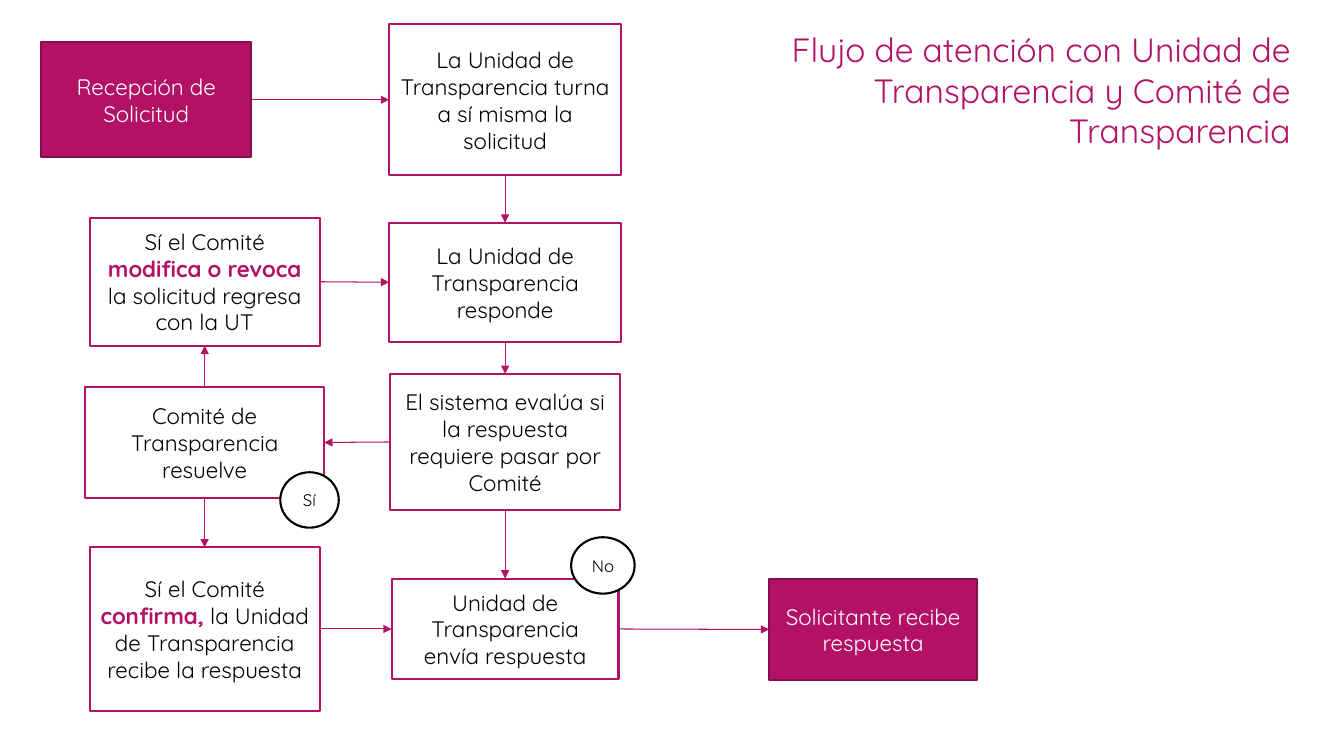
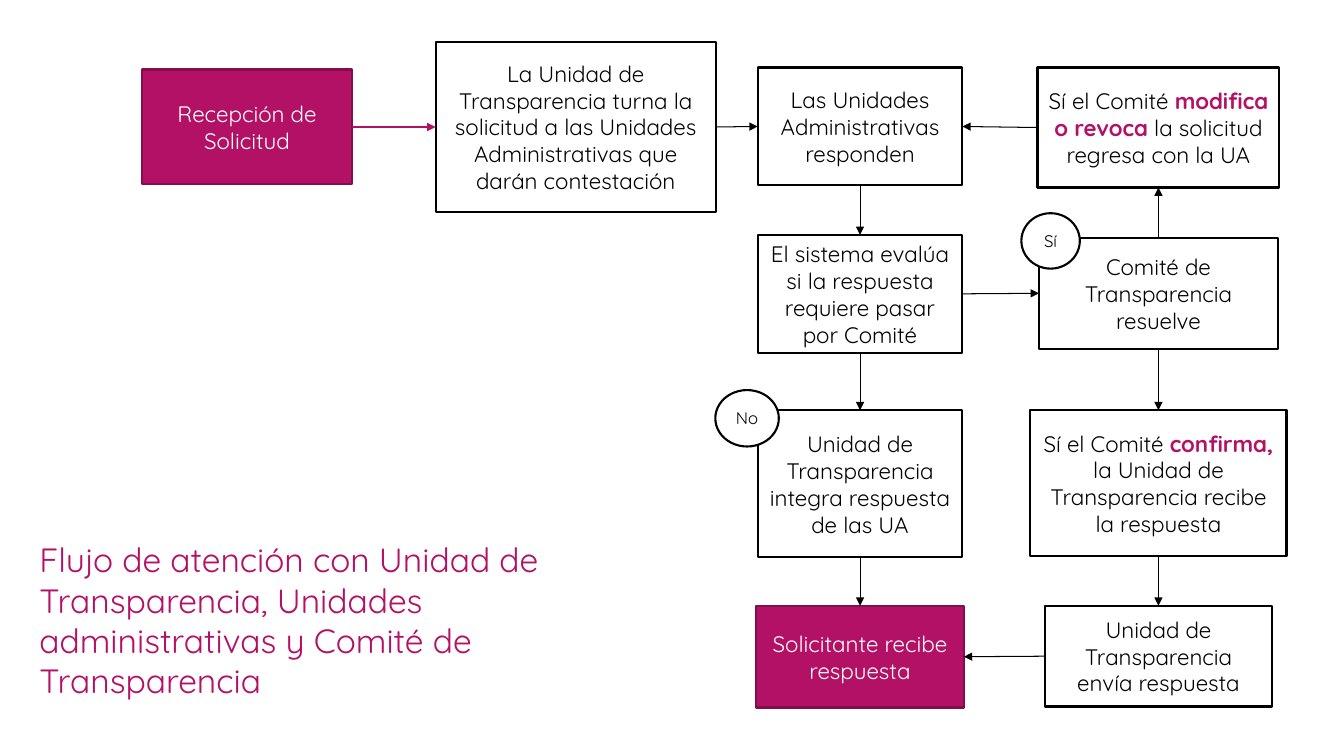
from collections import namedtuple

from pptx import Presentation
from pptx.dml.color import RGBColor
from pptx.enum.shapes import MSO_CONNECTOR as Connector, MSO_SHAPE as Shape
from pptx.enum.text import MSO_ANCHOR as Anchor, MSO_AUTO_SIZE as AutoSize, PP_ALIGN as Align
from pptx.oxml.ns import qn
from pptx.util import Emu, Pt

# Shared look: 100 px to the inch
EMU_PER_PX = 9144
FONT = "Quicksand"
MAGENTA, DARK_MAGENTA = "B31166", "840D4B"
BLACK, WHITE = "000000", "FFFFFF"
TITLE_SIZE, STEP_SIZE, BADGE_SIZE = 24, 16, 12
# Connection sites at the start and end of an arrow
SIDES = {"up": (0, 2), "left": (1, 3), "down": (2, 0), "right": (3, 1)}

Box = namedtuple("Box", "left top width height")
Step = namedtuple("Step", "top width height text")


def px(length):
    return Emu(int(length * EMU_PER_PX))


def rgb(colour):
    return RGBColor.from_string(colour)


def place(shape, box):
    shape.left, shape.top, shape.width, shape.height = map(px, box)


def add_run(paragraph, text, size, colour, bold=False):
    run = paragraph.add_run()
    run.text = text
    font = run.font
    font.name, font.size, font.bold = FONT, Pt(size), bold
    font.color.rgb = rgb(colour)


def add_title(slide, box, text, align):
    title = slide.shapes.title
    place(title, box)
    frame = title.text_frame
    frame.word_wrap = True
    frame.auto_size = AutoSize.NONE
    frame.vertical_anchor = Anchor.TOP
    paragraph = frame.paragraphs[0]
    paragraph.alignment = align
    add_run(paragraph, text, TITLE_SIZE, MAGENTA)


def add_node(slide, kind, box, text, size, fill, line, colour):
    """Draw a centred label; text between asterisks is emphasised."""
    shape = slide.shapes.add_shape(kind, *map(px, box))
    shape.shadow.inherit = False
    shape.fill.solid()
    shape.fill.fore_color.rgb = rgb(fill)
    shape.line.color.rgb = rgb(line)
    shape.line.width = Pt(1.5)
    frame = shape.text_frame
    frame.word_wrap = True
    frame.vertical_anchor = Anchor.MIDDLE
    for index, content in enumerate(text.split("\n")):
        paragraph = frame.add_paragraph() if index else frame.paragraphs[0]
        paragraph.alignment = Align.CENTER
        for part, words in enumerate(content.split("*")):
            strong = part % 2 == 1
            add_run(paragraph, words, size, MAGENTA if strong else colour, strong)
    return shape


def add_arrow(slide, source, target, direction, colour):
    arrow = slide.shapes.add_connector(Connector.STRAIGHT, 0, 0, 0, 0)
    start, end = SIDES[direction]
    arrow.begin_connect(source, start)
    arrow.end_connect(target, end)
    arrow.line.color.rgb = rgb(colour)
    arrow.line.width = Pt(0.75)
    outline = arrow.line._get_or_add_ln()
    outline.append(outline.makeelement(qn("a:tailEnd"), {"type": "triangle"}))
    properties = outline.getparent()
    properties.append(properties.makeelement(qn("a:effectLst"), {}))


def add_flow(slide, area, columns, arrows, badges, outline):
    """Draw steps centred on columns, then arrows and badges, within area."""
    nodes = {}
    for centre, steps in columns:
        for name, step in steps.items():
            box = Box(area.left + centre - step.width / 2, area.top + step.top,
                      step.width, step.height)
            is_end = name in ("reception", "applicant")
            style = (MAGENTA, DARK_MAGENTA, WHITE) if is_end else (WHITE, outline, BLACK)
            nodes[name] = add_node(slide, Shape.RECTANGLE, box, step.text, STEP_SIZE, *style)
    for source, direction, target in arrows:
        colour = MAGENTA if source == "reception" else outline
        add_arrow(slide, nodes[source], nodes[target], direction, colour)
    for text, (x, y), (width, height) in badges:
        box = Box(area.left + x - width / 2, area.top + y - height / 2, width, height)
        add_node(slide, Shape.OVAL, box, text, BADGE_SIZE, WHITE, BLACK, BLACK)


def add_flow_slide(presentation, title, title_box, align, **flow):
    slide = presentation.slides.add_slide(presentation.slide_layouts[5])
    add_title(slide, title_box, title, align)
    add_flow(slide, **flow)


# Wording and sizes common to both flows
RECEPTION = "Recepción de Solicitud"
APPLICANT = "Solicitante recibe respuesta"
EVALUATE = "El sistema evalúa si la respuesta requiere pasar por Comité"
RESOLVE = "Comité de Transparencia resuelve"
CONFIRM = "Sí el Comité *confirma,* la Unidad de Transparencia recibe la respuesta"
SEND = "Unidad de Transparencia envía respuesta"
REVOKE = "Sí el Comité *modifica o revoca* la solicitud regresa con la "
YES_SIZE, NO_SIZE = (58, 55), (63, 56)

# Arrows common to both flows
COMMON_ARROWS = [
    ("reception", "right", "assign"),
    ("answer", "down", "evaluate"),
    ("resolve", "up", "revoke"),
    ("resolve", "down", "confirm"),
]


def add_committee_slide(presentation):
    add_flow_slide(
        presentation,
        "Flujo de atención con Unidad de Transparencia y Comité de Transparencia",
        Box(648, 24, 642, 170), Align.RIGHT,
        area=Box(41, 24, 928, 681),
        outline=MAGENTA,
        columns=[
            (104, {"reception": Step(18, 208, 114, RECEPTION)}),
            (162, {
                "revoke": Step(192, 228, 127, REVOKE + "UT"),
                "resolve": Step(360, 237, 110, RESOLVE),
                "confirm": Step(519, 228, 162, CONFIRM),
            }),
            (460, {
                "assign": Step(0, 230, 150,
                               "La Unidad de Transparencia turna a sí misma la solicitud"),
                "answer": Step(197, 230, 118, "La Unidad de Transparencia\nresponde"),
                "evaluate": Step(347, 228, 135, EVALUATE),
                "send": Step(550, 225, 100, SEND),
            }),
            (825, {"applicant": Step(550, 206, 101, APPLICANT)}),
        ],
        arrows=COMMON_ARROWS + [
            ("assign", "down", "answer"),
            ("evaluate", "down", "send"),
            ("evaluate", "left", "resolve"),
            ("revoke", "right", "answer"),
            ("confirm", "right", "send"),
            ("send", "right", "applicant"),
        ],
        badges=[("Sí", (266, 472), YES_SIZE), ("No", (557, 537), NO_SIZE)],
    )


def add_units_slide(presentation):
    add_flow_slide(
        presentation,
        "Flujo de atención con Unidad de Transparencia, Unidades administrativas "
        "y Comité de Transparencia",
        Box(29, 530, 642, 170), Align.LEFT,
        area=Box(141, 42, 1135, 660),
        outline=BLACK,
        columns=[
            (104, {"reception": Step(27, 208, 114, RECEPTION)}),
            (430, {"assign": Step(0, 278, 168,
                                  "La Unidad de Transparencia turna la solicitud a las Unidades "
                                  "Administrativas que darán contestación")}),
            (712, {
                "answer": Step(25, 203, 117, "Las Unidades Administrativas responden"),
                "evaluate": Step(191, 203, 117, EVALUATE),
                "integrate": Step(365, 203, 146,
                                  "Unidad de Transparencia integra respuesta de las UA"),
                "applicant": Step(559, 206, 101, APPLICANT),
            }),
            (1008, {
                "revoke": Step(25, 240, 119, REVOKE + "UA"),
                "resolve": Step(194, 237, 110, RESOLVE),
                "confirm": Step(365, 254, 145, CONFIRM),
                "send": Step(559, 225, 100, SEND),
            }),
        ],
        arrows=COMMON_ARROWS + [
            ("assign", "right", "answer"),
            ("evaluate", "down", "integrate"),
            ("evaluate", "right", "resolve"),
            ("revoke", "left", "answer"),
            ("confirm", "down", "send"),
            ("integrate", "down", "applicant"),
            ("send", "left", "applicant"),
        ],
        badges=[("Sí", (901, 197), YES_SIZE), ("No", (600, 373), NO_SIZE)],
    )


def main():
    presentation = Presentation()
    presentation.slide_width, presentation.slide_height = px(1333), px(750)
    add_committee_slide(presentation)
    add_units_slide(presentation)
    presentation.save("out.pptx")


if __name__ == "__main__":
    main()
